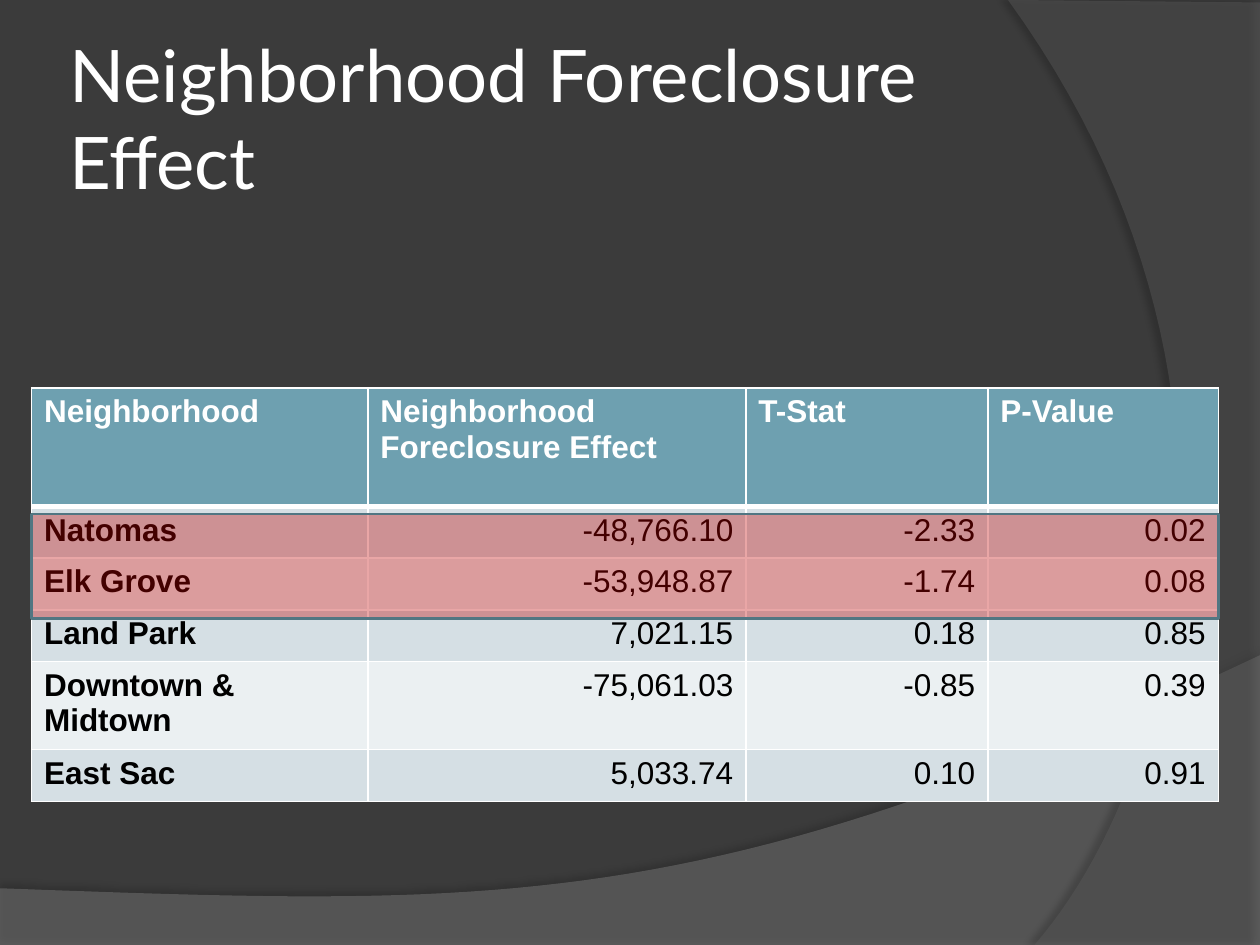
from lxml.etree import SubElement
from pptx import Presentation
from pptx.dml.color import RGBColor
from pptx.enum.shapes import MSO_SHAPE
from pptx.enum.text import MSO_ANCHOR, PP_ALIGN
from pptx.oxml import parse_xml
from pptx.oxml.ns import nsdecls, qn
from pptx.util import Inches, Pt


def rgb(value):
    return RGBColor.from_string(value)


def bezier(p0, p1, p2, p3, steps=48):
    """Points on a cubic curve, both ends included."""
    ts = [i / steps for i in range(steps + 1)]
    return [tuple((1 - t) ** 3 * a + 3 * (1 - t) ** 2 * t * b
                  + 3 * (1 - t) * t ** 2 * c + t ** 3 * d
                  for a, b, c, d in zip(p0, p1, p2, p3)) for t in ts]


def write(tf, text, font="Arial", size=18, color="000000", bold=False,
          align=PP_ALIGN.LEFT):
    p = tf.paragraphs[0]
    p.alignment = align
    r = p.add_run()
    r.text = text
    r.font.name, r.font.size, r.font.bold = font, Pt(size), bold
    r.font.color.rgb = rgb(color)


def set_fill(sp, color, opacity):
    sp.fill.solid()
    sp.fill.fore_color.rgb = rgb(color)
    clr = sp.fill._xPr.find(qn("a:solidFill"))[0]
    SubElement(clr, qn("a:alpha"), val=str(opacity * 1000))


def set_borders(cell, top=1, bottom=1, color="FFFFFF"):
    tcPr = cell._tc.get_or_add_tcPr()
    for i, (side, width) in enumerate(
            [("L", 1), ("R", 1), ("T", top), ("B", bottom)]):
        tcPr.insert(i, parse_xml(
            f'<a:ln{side} {nsdecls("a")} w="{Pt(width)}"><a:solidFill>'
            f'<a:srgbClr val="{color}"/></a:solidFill></a:ln{side}>'))


class SlideBuilder:
    """Holds the slide and the colours of its table."""
    HEADER = "6EA0B0"
    BANDS = ("D5DFE4", "EBF0F2")

    def __init__(self, slide, background):
        self.s = slide
        slide.background.fill.solid()
        slide.background.fill.fore_color.rgb = rgb(background)

    def wave(self, points, color, opacity, shade, distance, angle):
        """Translucent outline with a soft shadow cast towards angle."""
        start, *rest = [(Inches(x), Inches(y)) for x, y in points]
        builder = self.s.shapes.build_freeform(*start)
        builder.add_line_segments(rest, close=True)
        sp = builder.convert_to_shape()
        set_fill(sp, color, opacity)
        sp.line.fill.background()
        sp.shadow.inherit = False
        effects = sp._element.spPr.find(qn("a:effectLst"))
        effects.append(parse_xml(
            f'<a:outerShdw {nsdecls("a")} blurRad="{Pt(4)}" dist="{Pt(distance)}"'
            f' dir="{angle * 60000}" algn="ctr" rotWithShape="0">'
            f'<a:srgbClr val="000000"><a:alpha val="{shade * 1000}"/>'
            '</a:srgbClr></a:outerShdw>'))

    def title(self, text, left, top, width, height):
        sp = self.s.shapes.add_textbox(
            Inches(left), Inches(top), Inches(width), Inches(height))
        tf = sp.text_frame
        tf.word_wrap = True
        tf.vertical_anchor = MSO_ANCHOR.MIDDLE
        tf.margin_left = tf.margin_right = Inches(0.05)
        write(tf, text, font="Lato", size=41.4, color="FFFFFF")

    def table(self, rows, left, top, widths, heights):
        frame = self.s.shapes.add_table(
            len(rows), len(widths), Inches(left), Inches(top),
            Inches(sum(widths)), Inches(sum(heights)))
        table = frame.table
        for column, width in zip(table.columns, widths):
            column.width = Inches(width)
        for i, (values, height) in enumerate(zip(rows, heights)):
            table.rows[i].height = Inches(height)
            head = i == 0
            for j, value in enumerate(values):
                cell = table.cell(i, j)
                cell.fill.solid()
                cell.fill.fore_color.rgb = rgb(
                    self.HEADER if head else self.BANDS[(i - 1) % 2])
                set_borders(cell, top=3 if i == 1 else 1, bottom=3 if head else 1)
                write(cell.text_frame, value, bold=head or j == 0,
                      color="FFFFFF" if head else "000000",
                      align=PP_ALIGN.LEFT if head or j == 0 else PP_ALIGN.RIGHT)

    def highlight(self, left, top, width, height):
        sp = self.s.shapes.add_shape(
            MSO_SHAPE.RECTANGLE, Inches(left), Inches(top),
            Inches(width), Inches(height))
        sp.shadow.inherit = False
        set_fill(sp, "C00000", 35)
        sp.line.color.rgb = rgb("517682")
        sp.line.width = Pt(1.5)


ROWS = [
    ("Neighborhood", "Neighborhood Foreclosure Effect", "T-Stat", "P-Value"),
    ("Natomas", "-48,766.10", "-2.33", "0.02"),
    ("Elk Grove", "-53,948.87", "-1.74", "0.08"),
    ("Land Park", "7,021.15", "0.18", "0.85"),
    ("Downtown & Midtown", "-75,061.03", "-0.85", "0.39"),
    ("East Sac", "5,033.74", "0.10", "0.91"),
]


def main():
    prs = Presentation()
    prs.slide_width, prs.slide_height = Inches(10), Inches(7.5)
    page = SlideBuilder(prs.slides.add_slide(prs.slide_layouts[6]), "3B3B3B")

    lower = bezier((10, 5.2), (5.59, 7.29), (3.91, 7.19), (0, 7.05))
    page.wave([(0, 7.51), (10, 7.51)] + lower, "7F7F7F", 45,
              shade=35, distance=3.5, angle=270)
    right = bezier((8.21, 7.5), (9.35, 6.19), (10.18, 3), (8, 0))
    page.wave([(10, 0.02), (10, 7.5)] + right, "5E5E5E", 40,
              shade=45, distance=4, angle=180)

    page.title("Neighborhood Foreclosure Effect", 0.5, 0.3, 8.17, 1.25)
    widths = [2.67, 3, 1.92, 1.83]
    page.table(ROWS, 0.25, 3.08, widths, [0.94, 0.41, 0.41, 0.41, 0.66, 0.41])
    page.highlight(0.25, 4.08, sum(widths), 0.83)
    prs.save("out.pptx")


if __name__ == "__main__":
    main()
